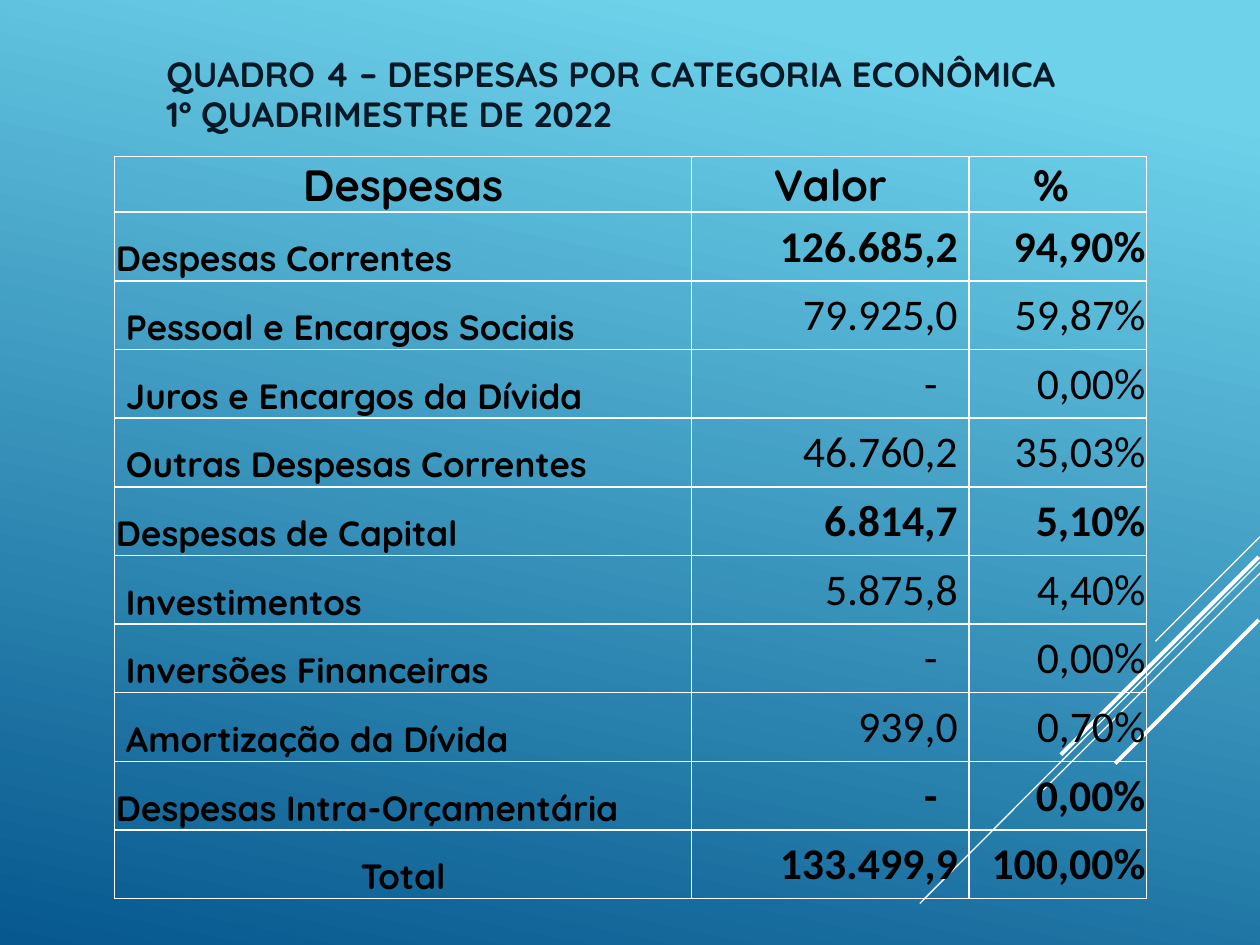
from lxml import etree
from pptx import Presentation
from pptx.dml.color import RGBColor
from pptx.enum.shapes import MSO_CONNECTOR
from pptx.enum.text import MSO_ANCHOR, MSO_AUTO_SIZE, PP_ALIGN
from pptx.oxml.ns import qn
from pptx.util import Inches, Pt

LEFT, CENTER, RIGHT = PP_ALIGN.LEFT, PP_ALIGN.CENTER, PP_ALIGN.RIGHT
MIDDLE, BOTTOM = MSO_ANCHOR.MIDDLE, MSO_ANCHOR.BOTTOM
STRAIGHT = MSO_CONNECTOR.STRAIGHT
NO_AUTOFIT = MSO_AUTO_SIZE.NONE
TITLE_ONLY = 5

HEADING_FONT, NUMBER_FONT = "Quicksand", "Calibri"
WHITE, BLACK, NAVY = "FFFFFF", "000000", "051825"
SKY, DEEP_BLUE = "6ED2EB", "06588E"

COLUMN_WIDTHS = [4.58, 2.2, 1.41]
HEADER_HEIGHT, ROW_HEIGHT = 0.44, 0.545
EDGE = 0.01  # inner margin of the cells

# Label, value, share, level: group, item or total
EXPENSES = [
    ("Despesas Correntes", "126.685,2", "94,90%", "group"),
    ("Pessoal e Encargos Sociais", "79.925,0", "59,87%", "item"),
    ("Juros e Encargos da Dívida", "-", "0,00%", "item"),
    ("Outras Despesas Correntes", "46.760,2", "35,03%", "item"),
    ("Despesas de Capital", "6.814,7", "5,10%", "group"),
    ("Investimentos", "5.875,8", "4,40%", "item"),
    ("Inversões Financeiras", "-", "0,00%", "item"),
    ("Amortização da Dívida", "939,0", "0,70%", "item"),
    ("Despesas Intra-Orçamentária", "-", "0,00%", "group"),
    ("Total", "133.499,9", "100,00%", "total"),
]

# Start, end and width of the diagonal lines
DIAGONALS = [
    ((10, 4.26), (9.17, 5.09), 0.75),
    ((10, 4.46), (7.3, 7.17), 0.75),
    ((10, 4.55), (8.28, 6.27), 0.75),
    ((9.99, 4.42), (8.42, 5.99), 2.25),
    ((9.99, 4.92), (8.85, 6.06), 2.25),
]


def rgb(color):
    return RGBColor.from_string(color)


def write_text(text_frame, text, font=HEADING_FONT, size=20, color=BLACK,
               bold=True, align=LEFT, spacing=None):
    text_frame.text = text
    for paragraph in text_frame.paragraphs:
        paragraph.alignment = align
        paragraph.line_spacing = spacing
        for run in paragraph.runs:
            run.font.name = font
            run.font.size = Pt(size)
            run.font.bold = bold
            run.font.color.rgb = rgb(color)


class SlideBuilder:
    def __init__(self, slide, line_color=WHITE):
        self.slide = slide
        self.line_color = line_color

    def background(self, stops, angle):
        fill = self.slide.background.fill
        fill.gradient()
        fill.gradient_angle = 360 - angle  # counted anticlockwise
        for stop, (position, color) in zip(fill.gradient_stops, stops):
            stop.position = position
            stop.color.rgb = rgb(color)

    def line(self, start, end, width):
        points = [Inches(length) for length in (*start, *end)]
        connector = self.slide.shapes.add_connector(STRAIGHT, *points)
        connector.line.color.rgb = rgb(self.line_color)
        connector.line.width = Pt(width)
        etree.SubElement(connector.element.spPr, qn("a:effectLst"))

    def title(self, text, left, top, width, height, **style):
        shape = self.slide.shapes.title
        shape.left, shape.top = Inches(left), Inches(top)
        shape.width, shape.height = Inches(width), Inches(height)
        frame = shape.text_frame
        frame.word_wrap = True
        frame.auto_size = NO_AUTOFIT
        frame.vertical_anchor = MIDDLE
        write_text(frame, text, **style)

    def table(self, left, top, widths, heights):
        frame = self.slide.shapes.add_table(
            len(heights), len(widths), Inches(left), Inches(top),
            Inches(sum(widths)), Inches(sum(heights)))
        table = frame.table
        table.first_row = table.horz_banding = False
        for column, width in zip(table.columns, widths):
            column.width = Inches(width)
        for row, height in zip(table.rows, heights):
            row.height = Inches(height)
        return table

    def cell(self, cell, text, anchor=MIDDLE, left=EDGE, right=EDGE, **style):
        cell.margin_left, cell.margin_right = Inches(left), Inches(right)
        cell.margin_top, cell.margin_bottom = Inches(EDGE), 0
        cell.vertical_anchor = anchor
        write_text(cell.text_frame, text, **style)
        self.borders(cell)
        cell.fill.background()

    def borders(self, cell):
        properties = cell._tc.get_or_add_tcPr()
        for side in ("lnL", "lnR", "lnT", "lnB"):
            border = etree.SubElement(properties, qn("a:" + side), w=str(Pt(1)))
            fill = etree.SubElement(border, qn("a:solidFill"))
            etree.SubElement(fill, qn("a:srgbClr"), val=self.line_color)


def main():
    presentation = Presentation()
    presentation.slide_width = Inches(10)
    presentation.slide_height = Inches(7.5)
    layout = presentation.slide_layouts[TITLE_ONLY]
    builder = SlideBuilder(presentation.slides.add_slide(layout))

    # Background and diagonal lines
    builder.background([(0.1, SKY), (1, DEEP_BLUE)], angle=102)
    for start, end, width in DIAGONALS:
        builder.line(start, end, width)

    # Title
    builder.title("QUADRO 4 – DESPESAS POR CATEGORIA ECONÔMICA\v"
                  "1º QUADRIMESTRE DE 2022",
                  1.22, 0.36, 8.5, 0.79, color=NAVY, spacing=0.96)

    # Expense table: header row
    heights = [HEADER_HEIGHT] + [ROW_HEIGHT] * len(EXPENSES)
    table = builder.table(0.91, 1.24, COLUMN_WIDTHS, heights)
    for column, (text, right) in enumerate(
            [("Despesas", EDGE), ("Valor", EDGE), ("%", 0.12)]):
        builder.cell(table.cell(0, column), text, right=right, size=25,
                     align=CENTER)

    # Expense table: body rows
    for row, (label, value, share, level) in enumerate(EXPENSES, start=1):
        builder.cell(table.cell(row, 0), label, anchor=BOTTOM,
                     left=0.09 if level == "item" else EDGE,
                     align=CENTER if level == "total" else LEFT)
        number_style = dict(font=NUMBER_FONT, size=25, align=RIGHT,
                            bold=level != "item")
        builder.cell(table.cell(row, 1), value,
                     right=0.25 if value == "-" else 0.09, **number_style)
        builder.cell(table.cell(row, 2), share, **number_style)

    presentation.save("out.pptx")


if __name__ == "__main__":
    main()
